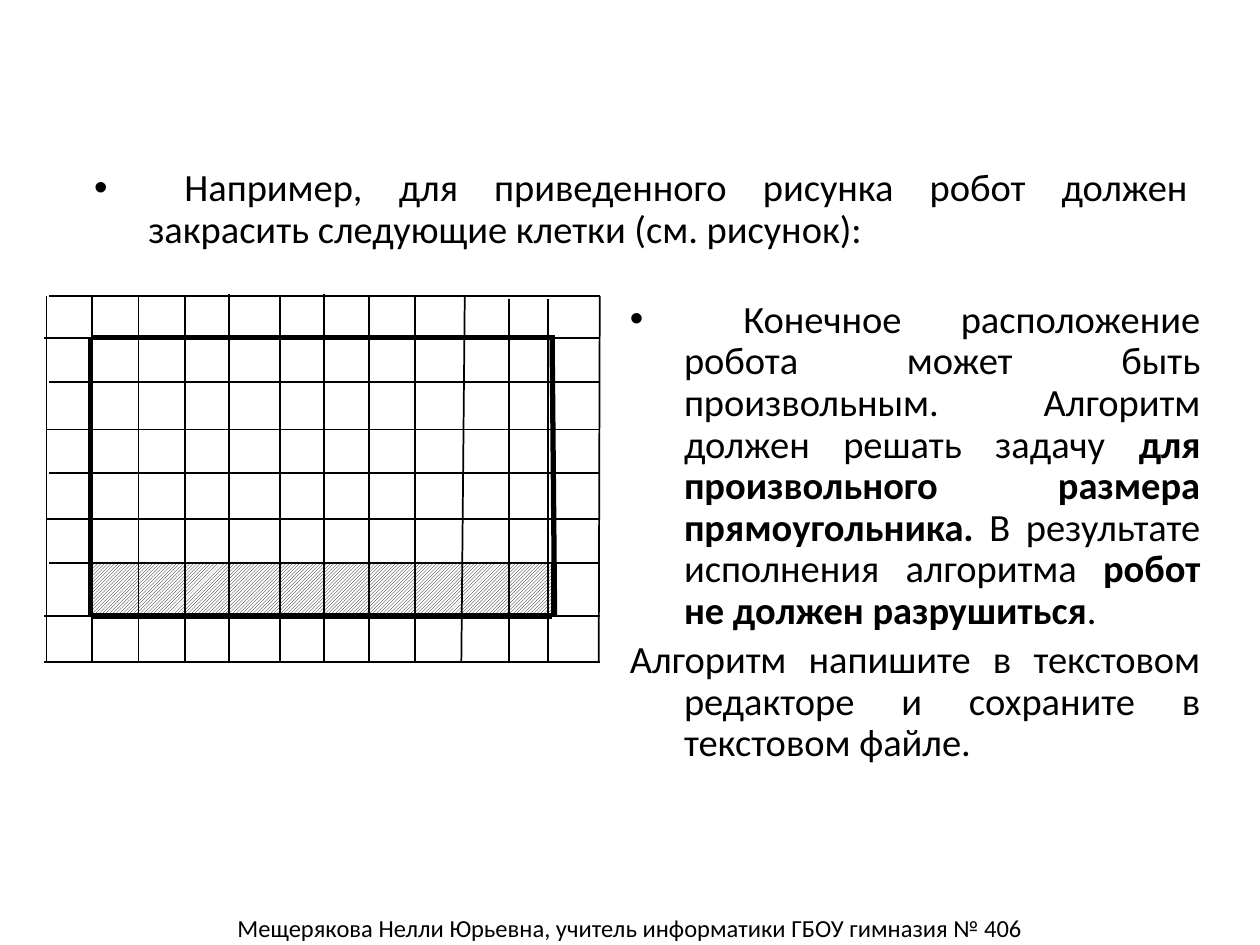
from dataclasses import dataclass

from lxml.etree import SubElement
from pptx import Presentation
from pptx.dml.color import RGBColor
from pptx.enum.dml import MSO_PATTERN
from pptx.enum.shapes import MSO_CONNECTOR, MSO_SHAPE
from pptx.enum.text import PP_ALIGN
from pptx.oxml.ns import qn
from pptx.util import Cm, Pt


@dataclass(frozen=True)
class Theme:
    ink: RGBColor = RGBColor(0, 0, 0)
    paper: RGBColor = RGBColor(255, 255, 255)
    font: str = "Calibri"
    bullet_font: str = "Arial"
    body: Pt = Pt(22)
    footer: Pt = Pt(14)
    thin: Pt = Pt(1)
    hatch_line: Pt = Pt(0.75)
    wall: Pt = Pt(3)
    indent: Cm = Cm(1.09)


class SlideBuilder:
    def __init__(self, slide, theme):
        self.slide = slide
        self.theme = theme
        self.field = None

    def text_frame(self, left, top, width, height):
        box = self.slide.shapes.add_textbox(Cm(left), Cm(top), Cm(width), Cm(height))
        box.text_frame.word_wrap = True
        return box.text_frame

    def fill_paragraph(self, paragraph, runs, size, align):
        for text, bold in runs:
            run = paragraph.add_run()
            run.text = text
            if bold:
                run.font.bold = True
        paragraph.alignment = align
        paragraph.font.size = size
        paragraph.font.name = self.theme.font
        paragraph.font.color.rgb = self.theme.ink

    def body(self, left, top, width, height, paragraphs):
        """Justified text; each paragraph is (has_bullet, runs)."""
        frame = self.text_frame(left, top, width, height)
        frame.margin_left = frame.margin_right = 0
        frame.margin_top = frame.margin_bottom = 0
        for index, (bulleted, runs) in enumerate(paragraphs):
            paragraph = frame.add_paragraph() if index else frame.paragraphs[0]
            paragraph.line_spacing = 0.9
            if index:
                paragraph.space_before = Pt(4.4)
            properties = paragraph._p.get_or_add_pPr()
            properties.set("marL", str(self.theme.indent))
            properties.set("indent", str(-self.theme.indent))
            if bulleted:
                SubElement(properties, qn("a:buFont"), typeface=self.theme.bullet_font)
                SubElement(properties, qn("a:buChar"), char="•")
            else:
                SubElement(properties, qn("a:buNone"))
            self.fill_paragraph(paragraph, runs, self.theme.body, PP_ALIGN.JUSTIFY)

    def footer(self, left, top, width, height, text):
        frame = self.text_frame(left, top, width, height)
        self.fill_paragraph(frame.paragraphs[0], [(text, False)],
                            self.theme.footer, PP_ALIGN.CENTER)

    def start_field(self):
        self.field = self.slide.shapes.add_group_shape().shapes

    def hatched(self, left, top, right, bottom):
        shape = self.field.add_shape(
            MSO_SHAPE.RECTANGLE, Cm(left), Cm(top), Cm(right - left), Cm(bottom - top))
        shape.shadow.inherit = False
        shape.fill.patterned()
        shape.fill.pattern = MSO_PATTERN.DARK_UPWARD_DIAGONAL
        shape.fill.fore_color.rgb = self.theme.ink
        shape.fill.back_color.rgb = self.theme.paper
        shape.line.color.rgb = self.theme.ink
        shape.line.width = self.theme.hatch_line

    def line(self, x1, y1, x2, y2, width):
        connector = self.field.add_connector(
            MSO_CONNECTOR.STRAIGHT, Cm(x1), Cm(y1), Cm(x2), Cm(y2))
        connector.line.color.rgb = self.theme.ink
        connector.line.width = width
        SubElement(connector._element.spPr, qn("a:effectLst"))


# Field lines in centimetres: rows as (y, left end), columns as (top x, bottom x, top y)
FIELD_TOP, FIELD_BOTTOM, FIELD_RIGHT = 5.97, 13.34, 12.09
ROWS = [(5.97, 0.99), (6.81, 0.89), (7.7, 0.99), (8.66, 0.94), (9.53, 0.99),
        (10.46, 0.94), (11.35, 0.99), (12.42, 0.89), (13.34, 0.89)]
COLUMNS = [(x, x, FIELD_TOP) for x in (0.94, 1.85, 2.79, 3.73, 5.64, 7.44, 8.36)]
COLUMNS += [(x, x, 5.92) for x in (4.62, 6.53)]
COLUMNS += [(x, x, 6.02) for x in (10.26, 11.05)]
COLUMNS += [(9.37, 9.3, FIELD_TOP), (FIELD_RIGHT, 12.07, FIELD_TOP)]
WALLS = [(1.85, 6.81, 11.18, 6.81), (1.83, 12.42, 11.13, 12.42),
         (1.83, 6.81, 1.83, 12.42), (11.13, 6.81, 11.18, 12.42)]


def main():
    presentation = Presentation()
    presentation.slide_width, presentation.slide_height = Cm(25.4), Cm(19.05)
    slide = presentation.slides.add_slide(presentation.slide_layouts[6])
    theme = Theme()
    builder = SlideBuilder(slide, theme)

    # Footer and task text
    builder.footer(0.5, 18.29, 24.4, 0.84,
                   "Мещерякова Нелли Юрьевна, учитель информатики ГБОУ гимназия № 406")
    builder.body(1.9, 3.4, 22.05, 1.7, [
        (True, [(" Например, для приведенного рисунка робот должен закрасить "
                 "следующие клетки (см. рисунок):", False)]),
    ])
    builder.body(12.7, 6.05, 11.5, 9.4, [
        (True, [
            (" Конечное расположение робота может быть произвольным. "
             "Алгоритм должен решать задачу ", False),
            ("для произвольного размера прямоугольника.", True),
            (" В результате исполнения алгоритма ", False),
            ("робот не должен разрушиться", True),
            (".", False),
        ]),
        (False, [("Алгоритм напишите в текстовом редакторе и сохраните "
                  "в текстовом файле.", False)]),
    ])

    # Robot field: painted cells, grid, walls
    builder.start_field()
    builder.hatched(1.85, 11.35, 11.13, 12.42)
    for y, left in ROWS:
        builder.line(left, y, FIELD_RIGHT, y, theme.thin)
    for top_x, bottom_x, top in COLUMNS:
        builder.line(top_x, top, bottom_x, FIELD_BOTTOM, theme.thin)
    for wall in WALLS:
        builder.line(*wall, theme.wall)

    presentation.save("out.pptx")


if __name__ == "__main__":
    main()
